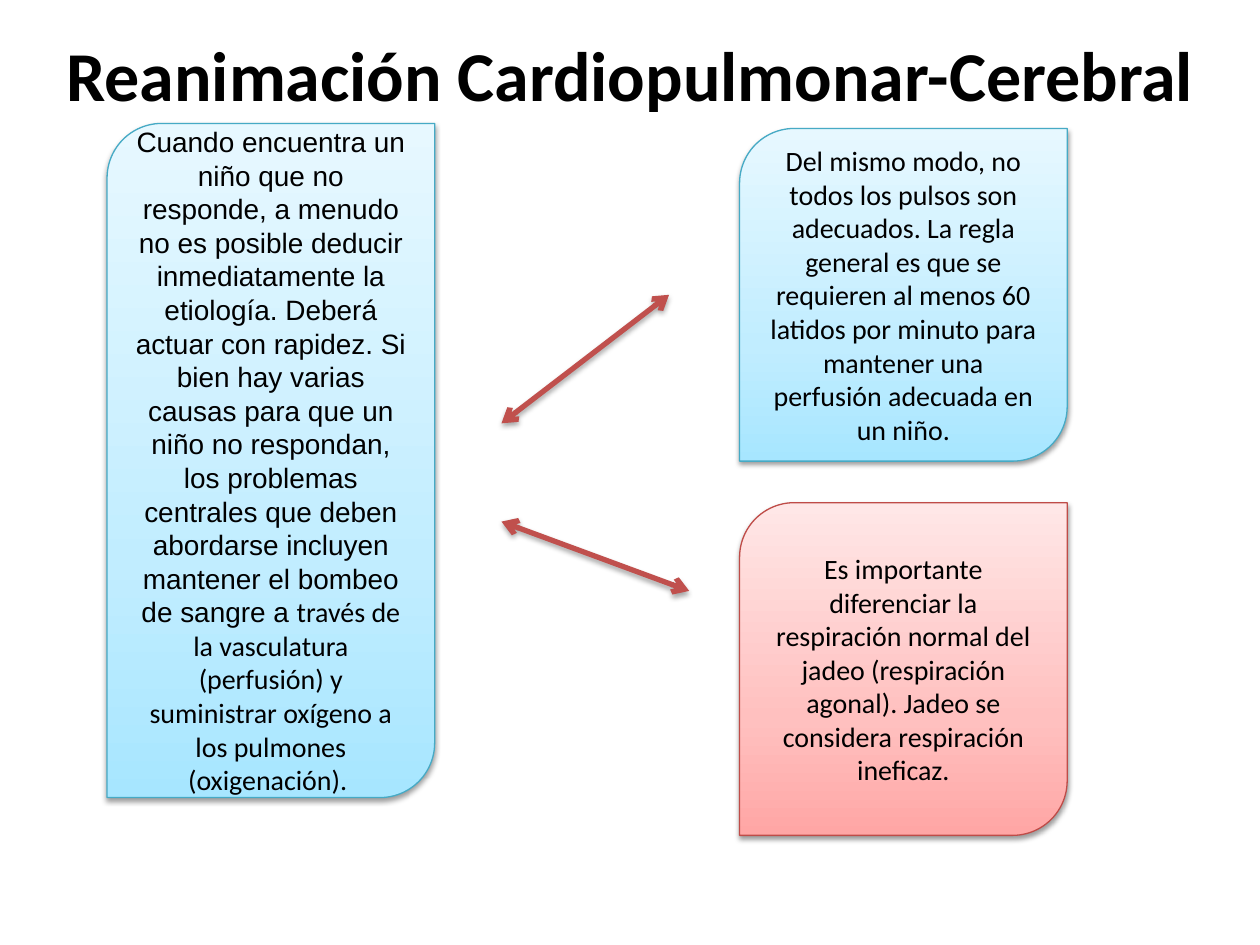
from copy import deepcopy
from dataclasses import dataclass

from lxml import etree
from pptx import Presentation
from pptx import util as u
from pptx.dml.color import RGBColor
from pptx.enum import shapes, text
from pptx.oxml.ns import qn


@dataclass(frozen=True)
class Theme:
    ink: str = "000000"
    arrow: str = "C0504D"
    blue: tuple = ("A7E6FF", "C1EDFF", "E7F8FF")
    blue_line: str = "46AAC5"
    red: tuple = ("FFA6A5", "FFC0BF", "FFE7E7")
    red_line: str = "BF4C48"
    stops: tuple = (0, 0.35, 1)
    body_font: str = "Calibri"
    alt_font: str = "Arial"
    title_size: int = 40
    body_size: int = 16
    card_line: float = 0.75
    arrow_line: float = 3


class SlideBuilder:
    def __init__(self, slide, theme):
        self.slide = slide
        self.theme = theme

    def add_run(self, p, words, font, size, bold=False):
        r = p.add_run()
        r.text = words
        r.font.name = font
        r.font.size = u.Pt(size)
        r.font.bold = bold
        r.font.color.rgb = RGBColor.from_string(self.theme.ink)

    def add_shadow(self, effects, opacity, distance):
        shadow = etree.SubElement(
            effects, qn("a:outerShdw"), blurRad=str(u.Pt(3.1)),
            dist=str(u.Pt(distance)), dir="5400000", rotWithShape="0")
        color = etree.SubElement(shadow, qn("a:srgbClr"), val="000000")
        etree.SubElement(color, qn("a:alpha"), val=str(opacity * 1000))

    def title(self, x, y, w, h, words):
        tf = self.slide.shapes.add_textbox(
            u.Inches(x), u.Inches(y), u.Inches(w), u.Inches(h)).text_frame
        tf.word_wrap = False
        tf.auto_size = text.MSO_AUTO_SIZE.SHAPE_TO_FIT_TEXT
        p = tf.paragraphs[0]
        p.alignment = text.PP_ALIGN.CENTER
        self.add_run(p, words, self.theme.body_font, self.theme.title_size, True)

    def card(self, x, y, w, h, colors, line, runs):
        sp = self.slide.shapes.add_shape(
            shapes.MSO_SHAPE.ROUND_2_DIAG_RECTANGLE,
            u.Inches(x), u.Inches(y), u.Inches(w), u.Inches(h))

        # Three-stop gradient, darkest at the bottom
        sp.fill.gradient()
        sp.fill.gradient_angle = 90
        stop_list = sp.element.spPr.find(".//" + qn("a:gsLst"))
        stop_list.append(deepcopy(stop_list[-1]))
        for stop, position, color in zip(
                sp.fill.gradient_stops, self.theme.stops, colors):
            stop.position = position
            stop.color.rgb = RGBColor.from_string(color)

        sp.line.color.rgb = RGBColor.from_string(line)
        sp.line.width = u.Pt(self.theme.card_line)
        sp.shadow.inherit = False
        self.add_shadow(sp.element.spPr.find(qn("a:effectLst")), 38, 1.6)

        tf = sp.text_frame
        tf.word_wrap = True
        tf.vertical_anchor = text.MSO_ANCHOR.MIDDLE
        p = tf.paragraphs[0]
        p.alignment = text.PP_ALIGN.CENTER
        for words, font in runs:
            self.add_run(p, words, font, self.theme.body_size)

    def double_arrow(self, x1, y1, x2, y2):
        line = self.slide.shapes.add_connector(
            shapes.MSO_CONNECTOR.STRAIGHT,
            u.Inches(x1), u.Inches(y1), u.Inches(x2), u.Inches(y2))
        line.line.color.rgb = RGBColor.from_string(self.theme.arrow)
        line.line.width = u.Pt(self.theme.arrow_line)
        spPr = line.element.spPr
        for end in ("a:headEnd", "a:tailEnd"):
            etree.SubElement(spPr.find(qn("a:ln")), qn(end), type="arrow")
        self.add_shadow(etree.SubElement(spPr, qn("a:effectLst")), 35, 1.8)


def main():
    prs = Presentation()
    prs.slide_width, prs.slide_height = u.Inches(10), u.Inches(7.5)
    theme = Theme()
    s = SlideBuilder(prs.slides.add_slide(prs.slide_layouts[6]), theme)

    # Main card and title
    s.card(0.85, 0.98, 2.6, 5.35, theme.blue, theme.blue_line, [
        ("Cuando encuentra un niño que no responde, a menudo no es posible "
         "deducir inmediatamente la etiología. Deberá actuar con rapidez. Si "
         "bien hay varias causas para que un niño no respondan, los problemas "
         "centrales que deben abordarse incluyen mantener el bombeo de sangre a ",
         theme.alt_font),
        ("través de la vasculatura (perfusión) y suministrar oxígeno a los "
         "pulmones (oxigenación). ", theme.body_font)])
    s.title(0.37, 0.2, 9.26, 0.77, "Reanimación Cardiopulmonar-Cerebral")

    # Pulse and breathing cards
    side_cards = [
        (1.02, theme.blue, theme.blue_line,
         "Del mismo modo, no todos los pulsos son adecuados. La regla general "
         "es que se requieren al menos 60 latidos por minuto para mantener una "
         "perfusión adecuada en un niño."),
        (3.99, theme.red, theme.red_line,
         "Es importante diferenciar la respiración normal del jadeo "
         "(respiración agonal). Jadeo se considera respiración ineficaz."),
    ]
    for y, colors, line, words in side_cards:
        s.card(5.87, y, 2.6, 2.64, colors, line, [(words, theme.body_font)])

    # Arrows between the main card and the side cards
    s.double_arrow(3.98, 3.36, 5.31, 2.34)
    s.double_arrow(3.98, 4.14, 5.47, 4.69)

    prs.save("out.pptx")


if __name__ == "__main__":
    main()
